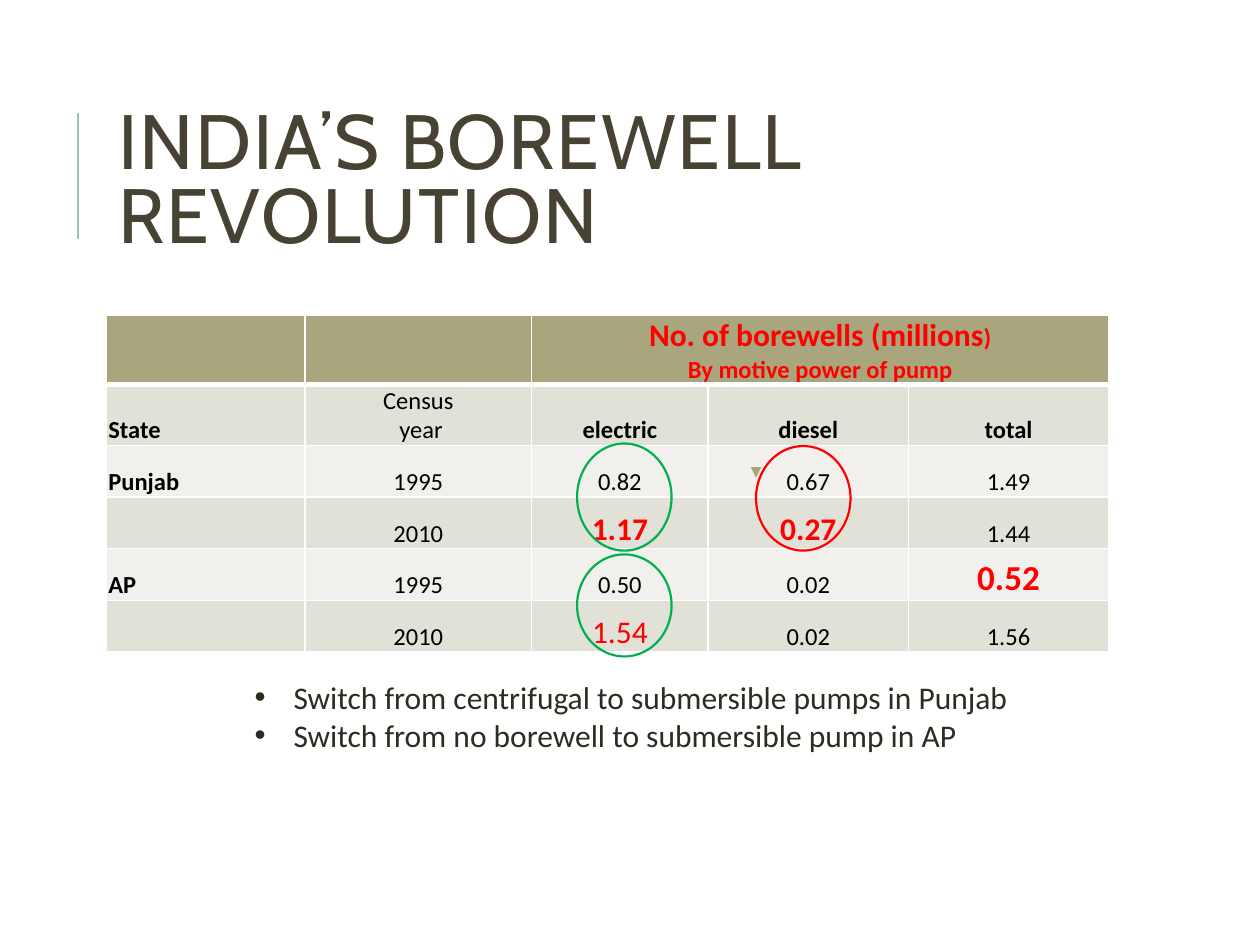
"""Build the slide on India's borewell revolution."""
from lxml import etree
from pptx import Presentation
from pptx import util as u
from pptx.dml.color import RGBColor
from pptx.enum import shapes, text
from pptx.oxml.ns import qn

COLORS = {"title": "474233", "body": "2E2B21", "black": "000000", "red": "FF0000",
          "green": "00B050", "teal": "9CBEBD", "khaki": "A9A57C",
          "band_dark": "E2E1D7", "band_light": "F1F0EC", "white": "FFFFFF"}


def add_run(p, words, size, color, bold=False, font="Calibri"):
    r = p.add_run()
    r.text = words
    r.font.name, r.font.size, r.font.bold = font, u.Pt(size), bold
    r.font.color.rgb = RGBColor.from_string(COLORS[color])
    return r


def add_line(s, x, y1, y2, color, width):
    sp = s.shapes.add_connector(shapes.MSO_CONNECTOR.STRAIGHT, u.Inches(x),
                                u.Inches(y1), u.Inches(x), u.Inches(y2))
    sp.line.color.rgb = RGBColor.from_string(COLORS[color])
    sp.line.width = u.Pt(width)
    ln = sp.line._get_or_add_ln()
    etree.SubElement(sp._element.spPr, qn("a:effectLst"))
    return ln


prs = Presentation()
prs.slide_width, prs.slide_height = u.Inches(10), u.Inches(7.5)
s = prs.slides.add_slide(prs.slide_layouts[1])
title, body = s.placeholders

add_line(s, 0.62, 1.9, 0.9, "teal", 1.5)

title.left, title.top = u.Inches(0.84), u.Inches(0.64)
title.width, title.height = u.Inches(7.97), u.Inches(1.64)
tf = title.text_frame
tf.auto_size = text.MSO_AUTO_SIZE.NONE
tf.vertical_anchor = text.MSO_ANCHOR.MIDDLE
p = tf.paragraphs[0]
p.alignment = text.PP_ALIGN.LEFT
p.line_spacing = 0.8
r = add_run(p, "INDIA’S BOREWELL REVOLUTION", 44, "title", font="Cabin")
r.font._element.set("spc", "100")

rows = [["", "", "", "", ""],
        ["State", "Census\n year", "electric", "diesel", "total"],
        ["Punjab", "1995", "0.82", "0.67", "1.49"],
        ["", "2010", "1.17", "0.27", "1.44"],
        ["AP", "1995", "0.50", "0.02", "0.52"],
        ["", "2010", "1.54", "0.02", "1.56"]]
highlights = {"1.17": (18, "red", True), "0.27": (18, "red", True),
              "0.52": (20, "red", True), "1.54": (18, "red", False)}
bold_labels = {"State", "electric", "diesel", "total", "Punjab", "AP"}
widths = [1.58, 1.8, 1.4, 1.59, 1.59]
heights = [0.54, 0.48] + [0.41] * 4

table = s.shapes.add_table(len(rows), len(widths), u.Inches(0.84), u.Inches(2.5),
                           u.Inches(sum(widths)), u.Inches(sum(heights))).table
for column, width in zip(table.columns, widths):
    column.width = u.Inches(width)
for row, height in zip(table.rows, heights):
    row.height = u.Inches(height)

for i, values in enumerate(rows):
    fill = "khaki" if i == 0 else "band_dark" if i % 2 else "band_light"
    for j, value in enumerate(values):
        cell = table.cell(i, j)
        cell.margin_left = cell.margin_right = u.Inches(0.02)
        cell.margin_top, cell.margin_bottom = u.Inches(0.01), 0
        cell.vertical_anchor = text.MSO_ANCHOR.BOTTOM
        tcPr = cell._tc.get_or_add_tcPr()
        for side in "LRTB":
            thick = (i, side) in [(0, "B"), (1, "T")]
            ln = etree.SubElement(tcPr, qn(f"a:ln{side}"), w=str(u.Pt(3 if thick else 1)))
            paint = etree.SubElement(ln, qn("a:solidFill"))
            etree.SubElement(paint, qn("a:srgbClr"), val=COLORS["white"])
        cell.fill.solid()
        cell.fill.fore_color.rgb = RGBColor.from_string(COLORS[fill])
        if not value:
            continue
        style = highlights.get(value, (14, "black", value in bold_labels))
        for k, words in enumerate(value.split("\n")):
            p = cell.text_frame.add_paragraph() if k else cell.text_frame.paragraphs[0]
            p.alignment = text.PP_ALIGN.CENTER if j else text.PP_ALIGN.LEFT
            add_run(p, words, *style)

heading = table.cell(0, 2)
heading.merge(table.cell(0, 4))
tf = heading.text_frame
p = tf.paragraphs[0]
p.alignment = text.PP_ALIGN.CENTER
add_run(p, "No. of borewells (millions", 18, "red", True)
add_run(p, ")", 14, "red", True)
p = tf.add_paragraph()
p.alignment = text.PP_ALIGN.CENTER
add_run(p, "By motive power of pump", 14, "red", True)

for x, y, height, color in [(6, 3.54, 0.83, "red"), (4.58, 4.4, 0.81, "green"),
                            (4.58, 3.52, 0.85, "green")]:
    sp = s.shapes.add_shape(shapes.MSO_SHAPE.OVAL, u.Inches(x), u.Inches(y),
                            u.Inches(0.75), u.Inches(height))
    sp.shadow.inherit = False
    sp.fill.background()
    sp.line.color.rgb = RGBColor.from_string(COLORS[color])
    sp.line.width = u.Pt(1.25)

body.left, body.top = u.Inches(1.92), u.Inches(5.33)
body.width, body.height = u.Inches(6.33), u.Inches(0.71)
tf = body.text_frame
tf.auto_size = text.MSO_AUTO_SIZE.NONE
for k, words in enumerate(["Switch from centrifugal to submersible pumps in Punjab",
                           "Switch from no borewell to submersible pump in AP"]):
    p = tf.add_paragraph() if k else tf.paragraphs[0]
    p.space_before = u.Pt(0)
    pPr = p._p.get_or_add_pPr()
    pPr.set("marL", str(u.Inches(0.31)))
    pPr.set("indent", str(-u.Inches(0.31)))
    etree.SubElement(pPr, qn("a:buFont"), typeface="Arial")
    etree.SubElement(pPr, qn("a:buChar"), char="•")
    add_run(p, words, 18, "body")

ln = add_line(s, 6, 3.75, 3.79, "khaki", 0.75)
etree.SubElement(ln, qn("a:tailEnd"), type="triangle")

prs.save("out.pptx")
